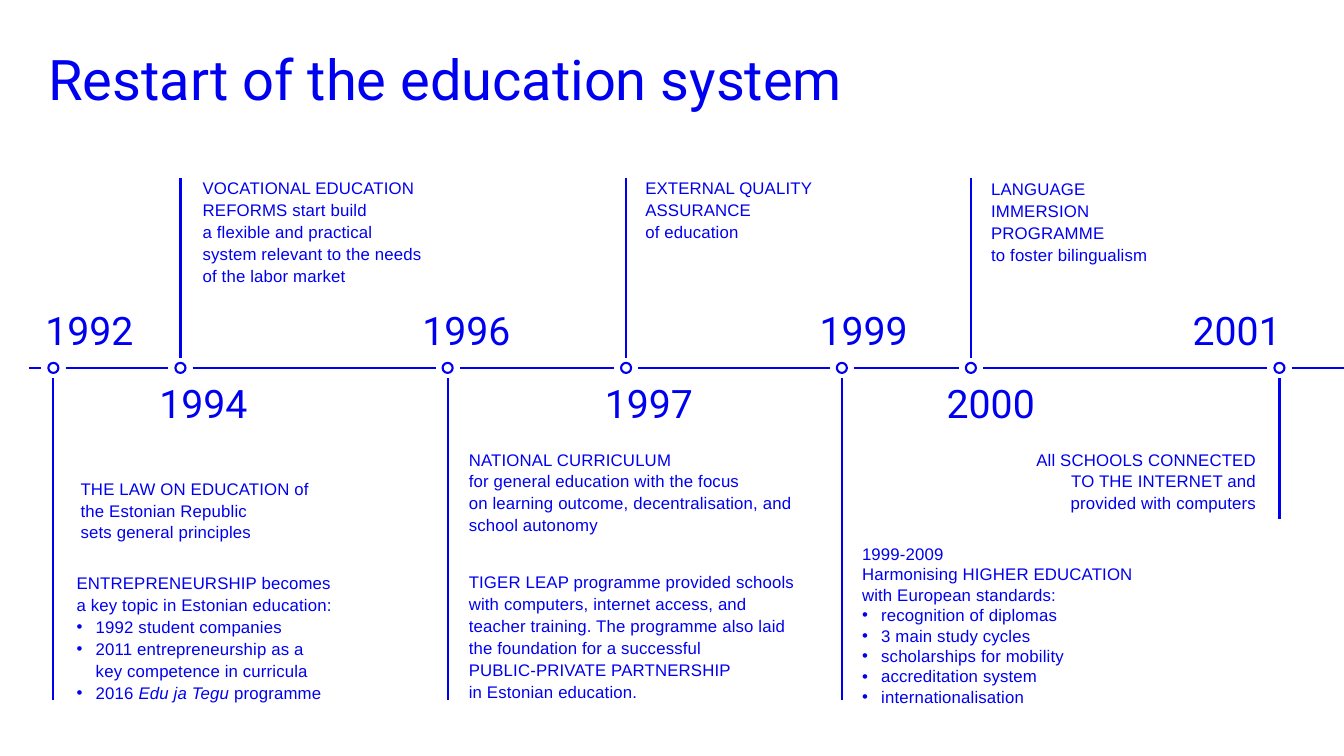
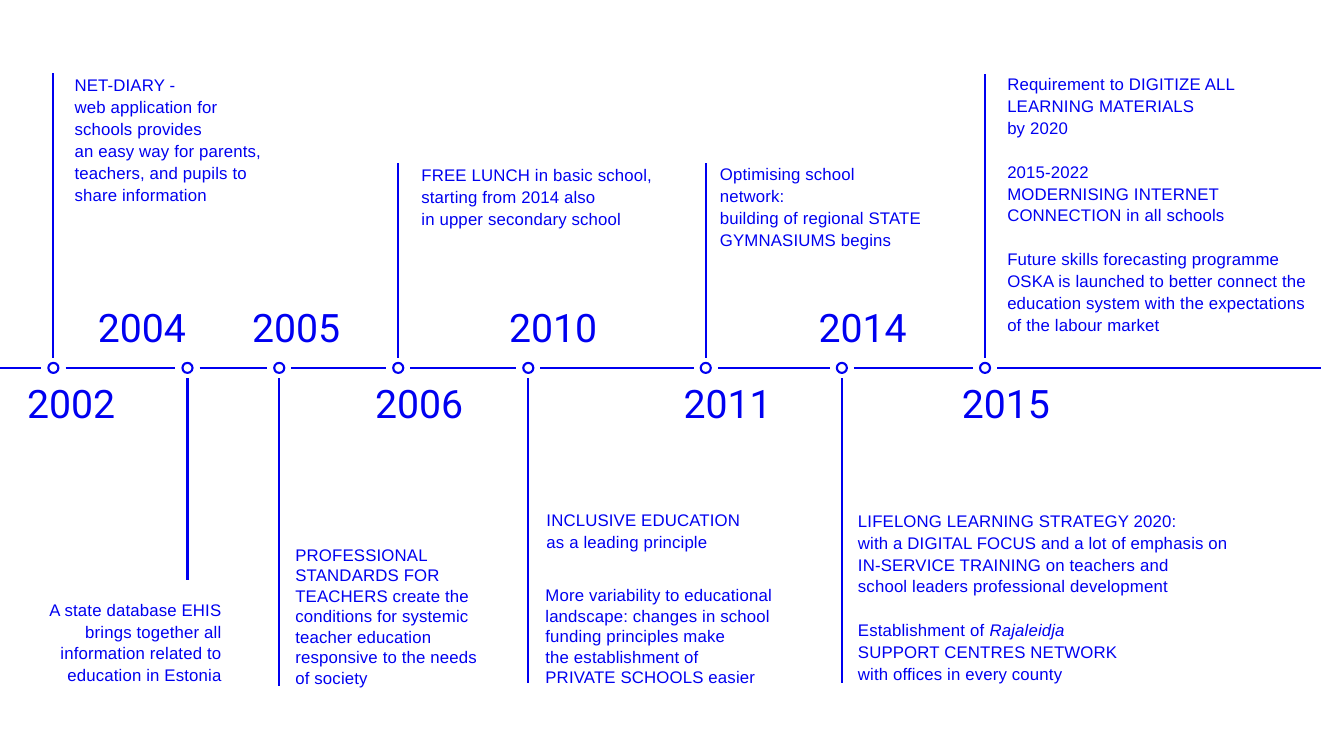
from dataclasses import dataclass

from lxml.etree import SubElement
from pptx import Presentation
from pptx.dml.color import RGBColor
from pptx.enum.shapes import MSO_CONNECTOR, MSO_SHAPE
from pptx.enum.text import MSO_ANCHOR, PP_ALIGN
from pptx.oxml.ns import qn
from pptx.util import Inches, Pt


@dataclass(frozen=True)
class Theme:
    """Colours, fonts, type sizes and timeline measures."""
    ink: RGBColor = RGBColor(0x00, 0x00, 0xF0)
    head: str = "Roboto"
    body: str = "Arial"
    title: float = 40
    year: float = 28
    note: float = 12
    lead: float = 15.6
    tight: float = 14.6
    line: float = 1.5
    dot: float = 0.1
    gap: float = 0.12


@dataclass(frozen=True)
class Note:
    """Text placed relative to its node."""
    x: float
    y: float
    wide: float
    rows: int
    text: str
    lead: float = Theme.lead
    align: PP_ALIGN = PP_ALIGN.LEFT


@dataclass(frozen=True)
class Event:
    """Node on the axis; a positive stem points down, with the year above."""
    x: float
    year: str
    shift: float
    stem: float
    notes: tuple


THEME = Theme()

FIRST = (
    Event(0.24, "1992", -0.08, 3.29, (
        Note(0.27, 1.08, 2.3, 3,
             "THE LAW ON EDUCATION of the Estonian Republic\vsets general principles"),
        Note(0.23, 2.02, 3, 6,
             "ENTREPRENEURSHIP becomes\va key topic in Estonian education:\n"
             "• 1992 student companies\n"
             "• 2011 entrepreneurship as a\vkey competence in curricula\n"
             "• 2016 *Edu ja Tegu* programme"))),
    Event(1.5, "1994", -0.21, -1.88, (
        Note(0.22, -1.9, 2.39, 5,
             "VOCATIONAL EDUCATION REFORMS start build\va flexible and practical\v"
             "system relevant to the needs\vof the labor market"),)),
    Event(4.15, "1996", -0.25, 3.29, (
        Note(0.21, 0.79, 3.26, 4,
             "NATIONAL CURRICULUM\nfor general education with the focus\v"
             "on learning outcome, decentralisation, and school autonomy"),
        Note(0.21, 2.01, 3.26, 6,
             "TIGER LEAP programme provided schools with computers, internet access, "
             "and teacher training. The programme also laid the foundation for a successful\n"
             "PUBLIC-PRIVATE PARTNERSHIP\vin Estonian education."))),
    Event(5.92, "1997", -0.21, -1.88, (
        Note(0.19, -1.9, 1.75, 3,
             "EXTERNAL QUALITY ASSURANCE\vof education"),)),
    Event(8.06, "1999", -0.22, 3.29, (
        Note(0.2, 1.74, 3.83, 8,
             "1999-2009\nHarmonising HIGHER EDUCATION\vwith European standards:\n"
             "• recognition of diplomas\n• 3 main study cycles\n"
             "• scholarships for mobility\n• accreditation system\n"
             "• internationalisation", lead=THEME.tight),)),
    Event(9.34, "2000", -0.24, -1.88, (
        Note(0.2, -1.89, 1.78, 4,
             "LANGUAGE IMMERSION\nPROGRAMME\nto foster bilingualism"),)),
    Event(12.4, "2001", -0.86, 1.5, (
        Note(-2.64, 0.79, 2.41, 3,
             "All SCHOOLS CONNECTED TO THE INTERNET and provided with computers",
             align=PP_ALIGN.RIGHT),)),
)

SECOND = (
    Event(0.53, "2002", -0.26, -2.93, (
        Note(0.21, -2.92, 2, 6,
             "NET-DIARY -\nweb application for schools provides\v"
             "an easy way for parents, teachers, and pupils to share information"),)),
    Event(1.86, "2004", -0.89, 2.1, (
        Note(-1.62, 2.28, 1.96, 4,
             "A state database EHIS brings together all information related to "
             "education in Estonia", align=PP_ALIGN.RIGHT),)),
    Event(2.77, "2005", -0.27, 3.16, (
        Note(0.16, 1.75, 1.86, 7,
             "PROFESSIONAL STANDARDS FOR TEACHERS create the conditions for systemic "
             "teacher education responsive to the needs of society",
             lead=THEME.tight),)),
    Event(3.95, "2006", -0.23, -2.03, (
        Note(0.23, -2.03, 2.53, 3,
             "FREE LUNCH in basic school,\vstarting from 2014 also\v"
             "in upper secondary school"),)),
    Event(5.24, "2010", -0.19, 3.13, (
        Note(0.18, 1.39, 2.09, 2,
             "INCLUSIVE EDUCATION\nas a leading principle"),
        Note(0.17, 2.15, 2.44, 5,
             "More variability to educational landscape: changes in school funding "
             "principles make\nthe establishment of\nPRIVATE SCHOOLS easier",
             lead=THEME.tight))),
    Event(7, "2011", -0.22, -2.03, (
        Note(0.14, -2.04, 2.01, 4,
             "Optimising school network:\nbuilding of regional STATE GYMNASIUMS begins"),)),
    Event(8.35, "2014", -0.23, 3.13, (
        Note(0.16, 1.4, 3.97, 8,
             "LIFELONG LEARNING STRATEGY 2020:\v"
             "with a DIGITAL FOCUS and a lot of emphasis on\v"
             "IN-SERVICE TRAINING on teachers and\v"
             "school leaders professional development\n\n"
             "Establishment of *Rajaleidja*\nSUPPORT CENTRES NETWORK\n"
             "with offices in every county"),)),
    Event(9.77, "2015", -0.23, -2.92, (
        Note(0.22, -2.93, 3.11, 12,
             "Requirement to DIGITIZE ALL LEARNING MATERIALS\vby 2020\n\n"
             "2015-2022\nMODERNISING INTERNET CONNECTION in all schools\n\n"
             "Future skills forecasting programme OSKA is launched to better connect "
             "the education system with the expectations of the labour market"),)),
)


def mark(para):
    """Give a paragraph a hanging bullet."""
    props = para._p.get_or_add_pPr()
    props.set("marL", str(Inches(0.19)))
    props.set("indent", str(Inches(-0.19)))
    SubElement(props, qn("a:buFont"), typeface="Arial")
    SubElement(props, qn("a:buChar"), char="•")


def write(frame, text, *, font, size, lead, align=PP_ALIGN.LEFT, track=None):
    """Fill a frame: empty lines add space, stars mark italics, \\v breaks lines."""
    frame.word_wrap = True
    frame.vertical_anchor = MSO_ANCHOR.TOP
    frame.margin_left = frame.margin_right = 0
    frame.margin_top = frame.margin_bottom = 0
    para, space = None, False
    for line in text.split("\n"):
        if not line:
            space = True
            continue
        para = frame.add_paragraph() if para else frame.paragraphs[0]
        para.alignment = align
        para.line_spacing = lead
        para.space_before = Pt(size * 1.3 if space else 0)
        space = False
        if line.startswith("• "):
            mark(para)
            line = line[2:]
        for turn, part in enumerate(line.split("*")):
            for row, words in enumerate(part.split("\v")):
                if row:
                    para.add_line_break()
                if not words:
                    continue
                run = para.add_run()
                run.text = words
                run.font.name = font
                run.font.size = Pt(size)
                run.font.italic = turn % 2 == 1
                run.font.color.rgb = THEME.ink
                if track:
                    run._r.get_or_add_rPr().set("spc", str(track))


def label(slide, box, text, **form):
    """Add a text box at the given box."""
    shape = slide.shapes.add_textbox(*map(Inches, box))
    write(shape.text_frame, text, **form)


def rule(slide, x1, y1, x2, y2):
    """Draw a straight line."""
    line = slide.shapes.add_connector(
        MSO_CONNECTOR.STRAIGHT, *map(Inches, (x1, y1, x2, y2)))
    line.line.color.rgb = THEME.ink
    line.line.width = Pt(THEME.line)
    SubElement(line._element.spPr, qn("a:effectLst"))


def node(slide, x, y):
    """Draw a ring centred on a point."""
    half = THEME.dot / 2
    ring = slide.shapes.add_shape(
        MSO_SHAPE.OVAL, *map(Inches, (x - half, y - half, THEME.dot, THEME.dot)))
    ring.shadow.inherit = False
    ring.fill.background()
    ring.line.color.rgb = THEME.ink
    ring.line.width = Pt(THEME.line)


def entry(slide, x, y, event, lift):
    """Draw one event around its node."""
    down = event.stem > 0
    rule(slide, x, y + (0.1 if down else -0.1), x, y + event.stem)
    node(slide, x, y)
    top = y - lift if down else y + 0.2
    label(slide, (x + event.shift, top, 1.24, 0.39), event.year,
          font=THEME.head, size=THEME.year, lead=Pt(27.7))
    for note in event.notes:
        box = (x + note.x, y + note.y, note.wide, note.rows * note.lead / 72)
        label(slide, box, note.text, font=THEME.body, size=THEME.note,
              lead=Pt(note.lead), align=note.align, track=10)


def axis(slide, box, events, lift):
    """Draw a timeline whose axis follows the left, height and width in box."""
    left, y, wide = box
    spots = [left + event.x for event in events]
    starts = [left] + [x + THEME.gap for x in spots]
    ends = [x - THEME.gap for x in spots] + [left + wide]
    for start, end in zip(starts, ends):
        rule(slide, start, y, end, y)
    for x, event in zip(spots, events):
        entry(slide, x, y, event, lift)


def head(slide, box, text):
    """Place and format the slide title."""
    title = slide.shapes.title
    title.left, title.top, title.width, title.height = map(Inches, box)
    write(title.text_frame, text, font=THEME.head, size=THEME.title, lead=0.9)


def main():
    """Build both slides and save them."""
    deck = Presentation()
    deck.slide_width, deck.slide_height = Inches(13.33), Inches(7.5)
    slide = deck.slides.add_slide(deck.slide_layouts[5])
    head(slide, (0.48, 0.52, 9.71, 1.21), "Restart of the education system")
    axis(slide, (0.29, 3.65, 13.04), FIRST, 0.53)
    slide = deck.slides.add_slide(deck.slide_layouts[6])
    axis(slide, (0, 3.65, 13.1), SECOND, 0.56)
    deck.save("out.pptx")


if __name__ == "__main__":
    main()
